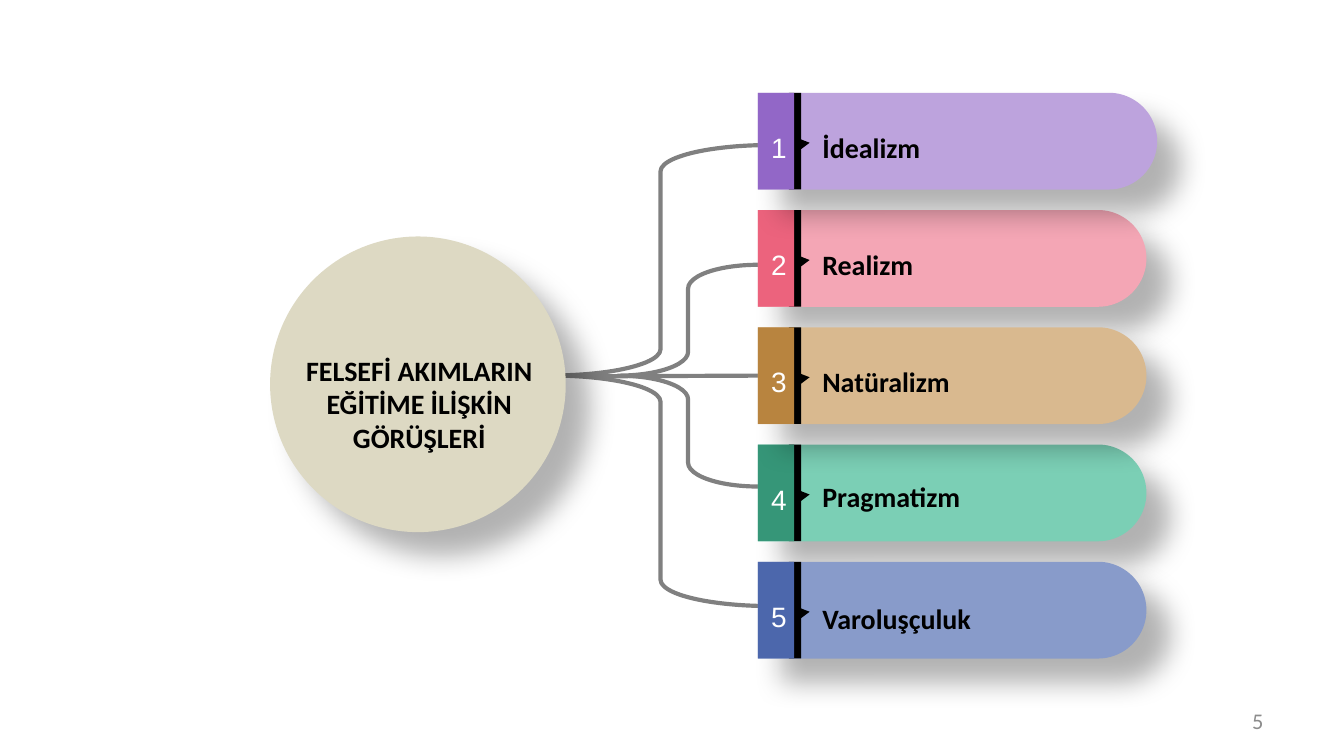
"""Build a slide that links a central topic to five numbered schools of thought."""
from lxml import etree
from pptx import Presentation
from pptx.dml.color import RGBColor
from pptx.enum.shapes import MSO_CONNECTOR, MSO_SHAPE
from pptx.enum.text import MSO_ANCHOR, MSO_AUTO_SIZE, PP_ALIGN
from pptx.oxml.ns import qn
from pptx.util import Inches, Pt

RECT, OVAL = MSO_SHAPE.RECTANGLE, MSO_SHAPE.OVAL
BAR, BRACE = MSO_SHAPE.ROUND_2_SAME_RECTANGLE, MSO_SHAPE.LEFT_BRACE
TRIANGLE, STRAIGHT = MSO_SHAPE.ISOSCELES_TRIANGLE, MSO_CONNECTOR.STRAIGHT
LEFT, CENTER, RIGHT = PP_ALIGN.LEFT, PP_ALIGN.CENTER, PP_ALIGN.RIGHT
FIT, FIXED = MSO_AUTO_SIZE.SHAPE_TO_FIT_TEXT, MSO_AUTO_SIZE.NONE
MIDDLE = MSO_ANCHOR.MIDDLE

TITLE = "FELSEFİ AKIMLARIN EĞİTİME İLİŞKİN GÖRÜŞLERİ"
PAGE = "5"
SCHOOLS = [
    ("İdealizm", "purple", 2.97, 0.23),
    ("Realizm", "pink", 2.89, 0.23),
    ("Natüralizm", "tan", 2.89, 0.23),
    ("Pragmatizm", "green", 2.89, 0.21),
    ("Varoluşçuluk", "blue", 2.89, 0.25),
]
BRACES = [((4.1, 1.08, 1.63, 3.43), 0.12), ((4.6, 1.97, 1.04, 1.65), 0.17)]
COLORS = {
    "purple": "9267C7", "purple_light": "BDA3DD",
    "pink": "EC637D", "pink_light": "F4A6B5",
    "tan": "B8843F", "tan_light": "D9B98F",
    "green": "369678", "green_light": "7BCFB5",
    "blue": "4C67AC", "blue_light": "889BCA",
    "circle": "DDD9C3", "line": "808080", "page": "8C8C8C",
    "black": "000000", "white": "FFFFFF",
}
WIDTH = 10
HEIGHT = WIDTH * 9 / 16
COL, ROW_H = 5.64, 0.72
FIRST_TOP, LAST_TOP = 0.69, 4.18
PITCH = (LAST_TOP - FIRST_TOP) / (len(SCHOOLS) - 1)


def rgb(name):
    return RGBColor.from_string(COLORS[name])


def add_shape(shapes, kind, box, fill, rotation=0):
    sp = shapes.add_shape(kind, *map(Inches, box))
    sp.shadow.inherit = False
    sp.fill.solid()
    sp.fill.fore_color.rgb = rgb(fill)
    sp.line.fill.background()
    sp.rotation = rotation
    return sp


def add_shadow(sp):
    effects = sp._element.spPr.find(qn("a:effectLst"))
    shadow = etree.SubElement(
        effects, qn("a:outerShdw"), blurRad=str(Pt(15)), dist=str(Pt(18)),
        dir="2700000", algn="tl", rotWithShape="0")
    color = etree.SubElement(shadow, qn("a:srgbClr"), val=COLORS["black"])
    etree.SubElement(color, qn("a:alpha"), val="30000")


def add_text(shapes, box, text, align, color="black", font="Calibri", size=15, bold=False):
    sp = shapes.add_textbox(*map(Inches, box))
    tf = sp.text_frame
    tf.word_wrap = True
    tf.auto_size = FIT
    p = tf.paragraphs[0]
    p.alignment = align
    r = p.add_run()
    r.text = text
    r.font.name, r.font.size, r.font.bold = font, Pt(size), bold
    r.font.color.rgb = rgb(color)
    return tf


def add_school(s, top, label, color, length, label_drop):
    shapes = s.shapes.add_group_shape().shapes
    overhang = (length - ROW_H) / 2
    bar = add_shape(shapes, BAR, (COL + overhang, top - overhang, ROW_H, length),
                    color + "_light", 90)
    bar.adjustments[0], bar.adjustments[1] = 0.5, 0
    add_shadow(bar)
    add_shape(shapes, RECT, (COL + 0.23, top, 0.09, ROW_H), "black")
    add_shape(shapes, TRIANGLE, (COL + 0.27, top + 0.33, 0.1, 0.08), "black", 323.3)
    tab = add_shape(shapes, RECT, (COL, top, 0.27, ROW_H), color)
    add_text(shapes, (COL + 0.38, top + label_drop, 2.29, 0.35), label, LEFT, bold=True)
    return tab


def style_line(line):
    line.color.rgb = rgb("line")
    line.width = Pt(2.25)


def main():
    prs = Presentation()
    prs.slide_width, prs.slide_height = Inches(WIDTH), Inches(HEIGHT)
    s = prs.slides.add_slide(prs.slide_layouts[6])

    link = s.shapes.add_connector(STRAIGHT, *map(Inches, (4.41, 2.8, COL, 2.8)))
    style_line(link.line)
    etree.SubElement(link._element.spPr, qn("a:effectLst"))
    for box, curve in BRACES:
        brace = s.shapes.add_shape(BRACE, *map(Inches, box))
        brace.shadow.inherit = False
        brace.fill.background()
        style_line(brace.line)
        brace.adjustments[0] = curve

    tops = [FIRST_TOP + i * PITCH for i in range(len(SCHOOLS))]
    tabs = {}
    for i in [*range(1, len(SCHOOLS), 2), *range(0, len(SCHOOLS), 2)]:
        tabs[i] = add_school(s, tops[i], *SCHOOLS[i])
    link.end_connect(tabs[len(SCHOOLS) // 2], 1)

    add_shadow(add_shape(s.shapes, OVAL, (2.01, 1.76, 2.2, 2.2), "circle"))
    add_text(s.shapes, (2.13, 2.58, 1.98, 0.86), TITLE, CENTER, bold=True)

    numbers = s.shapes.add_group_shape().shapes
    for i, top in enumerate(tops, 1):
        add_text(numbers, (COL - 0.05, top + 0.23, 0.41, 0.35), str(i), CENTER, "white", "Arial")

    tf = add_text(s.shapes, (7.17, 5.21, 2.33, 0.3), PAGE, RIGHT, "page", size=12)
    tf.auto_size = FIXED
    tf.vertical_anchor = MIDDLE
    prs.save("out.pptx")


if __name__ == "__main__":
    main()
